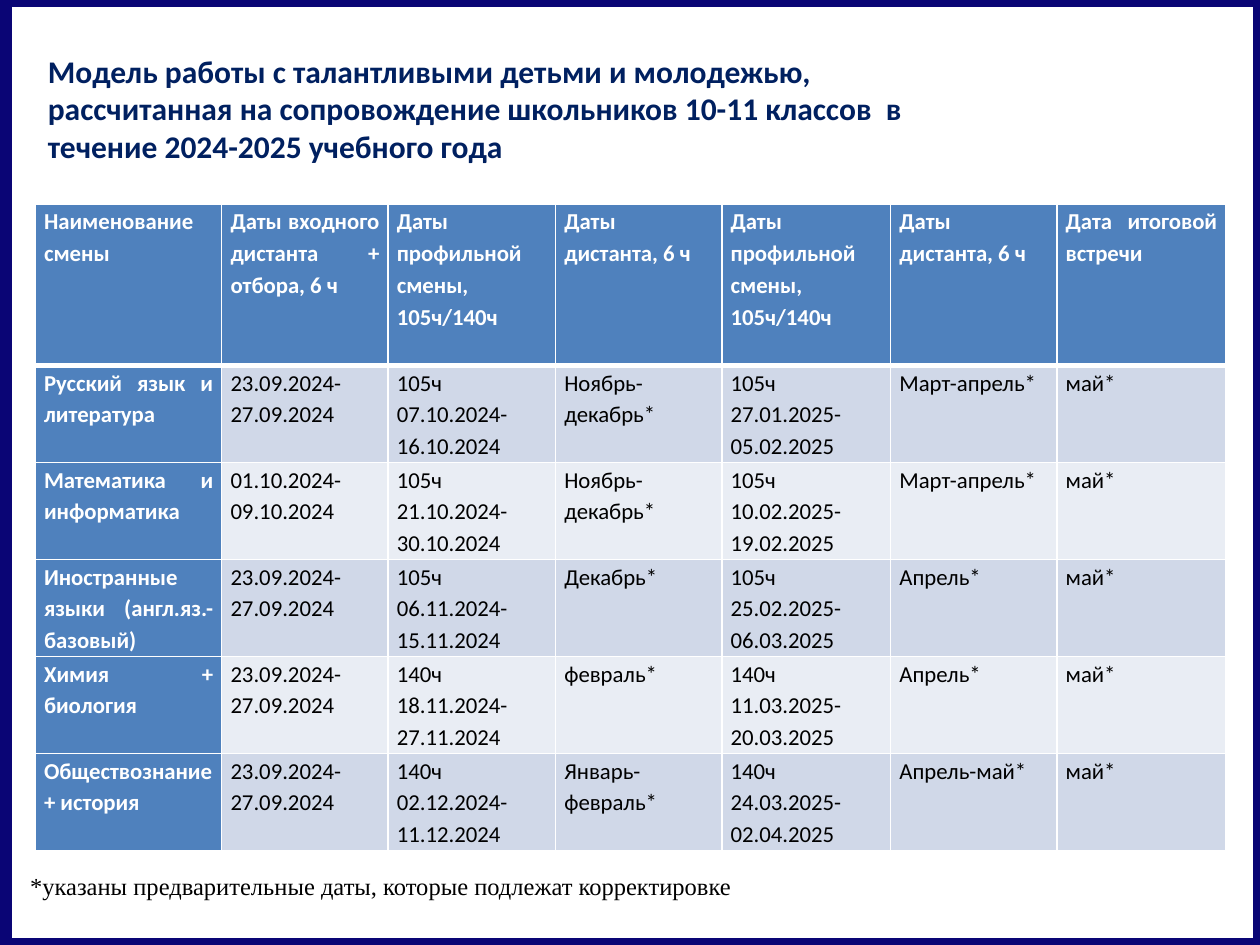
from pptx import Presentation
from pptx.dml.color import RGBColor
from pptx.enum.shapes import MSO_SHAPE
from pptx.enum.text import MSO_ANCHOR, MSO_AUTO_SIZE, PP_ALIGN
from pptx.oxml import parse_xml
from pptx.oxml.ns import nsdecls
from pptx.util import Inches, Pt

NAVY = RGBColor(0x0A, 0x05, 0x75)
TITLE_BLUE = RGBColor(0x00, 0x20, 0x60)
HEADER_BLUE = RGBColor(0x4F, 0x81, 0xBD)
BANDS = RGBColor(0xD0, 0xD8, 0xE8), RGBColor(0xE9, 0xED, 0xF4)
WHITE = RGBColor(0xFF, 0xFF, 0xFF)
BLACK = RGBColor(0x00, 0x00, 0x00)

TITLE = ("Модель работы с талантливыми детьми и молодежью, рассчитанная на "
         "сопровождение школьников 10-11 классов  в течение 2024-2025 учебного года")
FOOTNOTE = "*указаны предварительные даты, которые подлежат корректировке"

CAMP, REMOTE = "Даты профильной смены, 105ч/140ч", "Даты дистанта, 6 ч"
SCHEDULE = [
    ["Наименование смены", "Даты входного дистанта + отбора, 6 ч",
     CAMP, REMOTE, CAMP, REMOTE, "Дата итоговой встречи"],
    ["Русский язык и литература", "23.09.2024-27.09.2024", "105ч 07.10.2024-16.10.2024",
     "Ноябрь-декабрь*", "105ч 27.01.2025-05.02.2025", "Март-апрель*", "май*"],
    ["Математика и информатика", "01.10.2024-09.10.2024", "105ч 21.10.2024-30.10.2024",
     "Ноябрь-декабрь*", "105ч 10.02.2025-19.02.2025", "Март-апрель*", "май*"],
    ["Иностранные языки (англ.яз.- базовый)", "23.09.2024-27.09.2024",
     "105ч 06.11.2024-15.11.2024", "Декабрь*", "105ч 25.02.2025-06.03.2025",
     "Апрель*", "май*"],
    ["Химия + биология", "23.09.2024-27.09.2024", "140ч 18.11.2024-27.11.2024",
     "февраль*", "140ч 11.03.2025-20.03.2025", "Апрель*", "май*"],
    ["Обществознание + история", "23.09.2024-27.09.2024", "140ч 02.12.2024-11.12.2024",
     "Январь-февраль*", "140ч 24.03.2025-02.04.2025", "Апрель-май*", "май*"],
]
COL_WIDTHS = [1.48, 1.32, 1.33, 1.32, 1.34, 1.32, 1.34]
ROW_HEIGHTS = [1.28] + [0.77] * 5


class SlideBuilder:
    font = "Calibri"

    def __init__(self, prs):
        self.slide = prs.slides.add_slide(prs.slide_layouts[5])

    def style(self, p, size, color, bold=False, align=PP_ALIGN.LEFT, font=None):
        p.alignment = align
        p.font.name = font or self.font
        p.font.size = Pt(size)
        p.font.bold = bold
        p.font.color.rgb = color

    def frame(self, x, y, w, h):
        sp = self.slide.shapes.add_shape(
            MSO_SHAPE.RECTANGLE, Inches(x), Inches(y), Inches(w), Inches(h))
        sp.shadow.inherit = False
        sp.fill.background()
        sp.line.color.rgb = NAVY
        sp.line.width = Pt(8)

    def title(self, text, x, y, w, h):
        sp = self.slide.shapes.title
        sp.left, sp.top, sp.width, sp.height = map(Inches, (x, y, w, h))
        tf = sp.text_frame
        tf.text = text
        tf.word_wrap = True
        tf.auto_size = MSO_AUTO_SIZE.SHAPE_TO_FIT_TEXT
        tf.vertical_anchor = MSO_ANCHOR.TOP
        self.style(tf.paragraphs[0], 18, TITLE_BLUE, bold=True)

    def footnote(self, text, x, y, w, h):
        sp = self.slide.shapes.add_textbox(Inches(x), Inches(y), Inches(w), Inches(h))
        tf = sp.text_frame
        tf.text = text
        tf.word_wrap = False
        tf.vertical_anchor = MSO_ANCHOR.MIDDLE
        self.style(tf.paragraphs[0], 14, BLACK, align=PP_ALIGN.JUSTIFY,
                   font="Times New Roman")

    def borders(self, cell, top=1, bottom=1):
        """Draw white cell borders, with widths in points."""
        tc_pr = cell._tc.get_or_add_tcPr()
        for side, width in (("L", 1), ("R", 1), ("T", top), ("B", bottom)):
            tc_pr.append(parse_xml(
                f'<a:ln{side} {nsdecls("a")} w="{Pt(width)}"><a:solidFill>'
                f'<a:srgbClr val="{WHITE}"/></a:solidFill></a:ln{side}>'))

    def cell(self, cell, text, fill, color, bold):
        cell.fill.solid()
        cell.fill.fore_color.rgb = fill
        cell.margin_left = cell.margin_right = Inches(0.07)
        cell.margin_top = cell.margin_bottom = 0
        cell.text = text
        p = cell.text_frame.paragraphs[0]
        p.line_spacing = 1.15
        p.space_after = Pt(10)
        self.style(p, 13, color, bold, PP_ALIGN.JUSTIFY)

    def table(self, rows, x, y, widths, heights):
        table = self.slide.shapes.add_table(
            len(rows), len(widths), Inches(x), Inches(y),
            Inches(sum(widths)), Inches(sum(heights))).table
        for column, width in zip(table.columns, widths):
            column.width = Inches(width)
        for row, height in zip(table.rows, heights):
            row.height = Inches(height)
        for r, texts in enumerate(rows):
            for c, text in enumerate(texts):
                cell = table.cell(r, c)
                self.borders(cell, top=3 if r == 1 else 1, bottom=3 if r == 0 else 1)
                if r == 0 or c == 0:
                    self.cell(cell, text, HEADER_BLUE, WHITE, True)
                else:
                    self.cell(cell, text, BANDS[(r - 1) % 2], BLACK, False)


def main():
    prs = Presentation()
    prs.slide_width, prs.slide_height = Inches(10), Inches(7.5)
    s = SlideBuilder(prs)
    s.frame(0.04, 0, 9.96, 7.5)
    s.table(SCHEDULE, 0.28, 1.62, COL_WIDTHS, ROW_HEIGHTS)
    s.footnote(FOOTNOTE, 0.14, 6.86, 5.81, 0.34)
    s.title(TITLE, 0.28, 0.36, 7.4, 1.01)
    prs.save("out.pptx")


if __name__ == "__main__":
    main()
